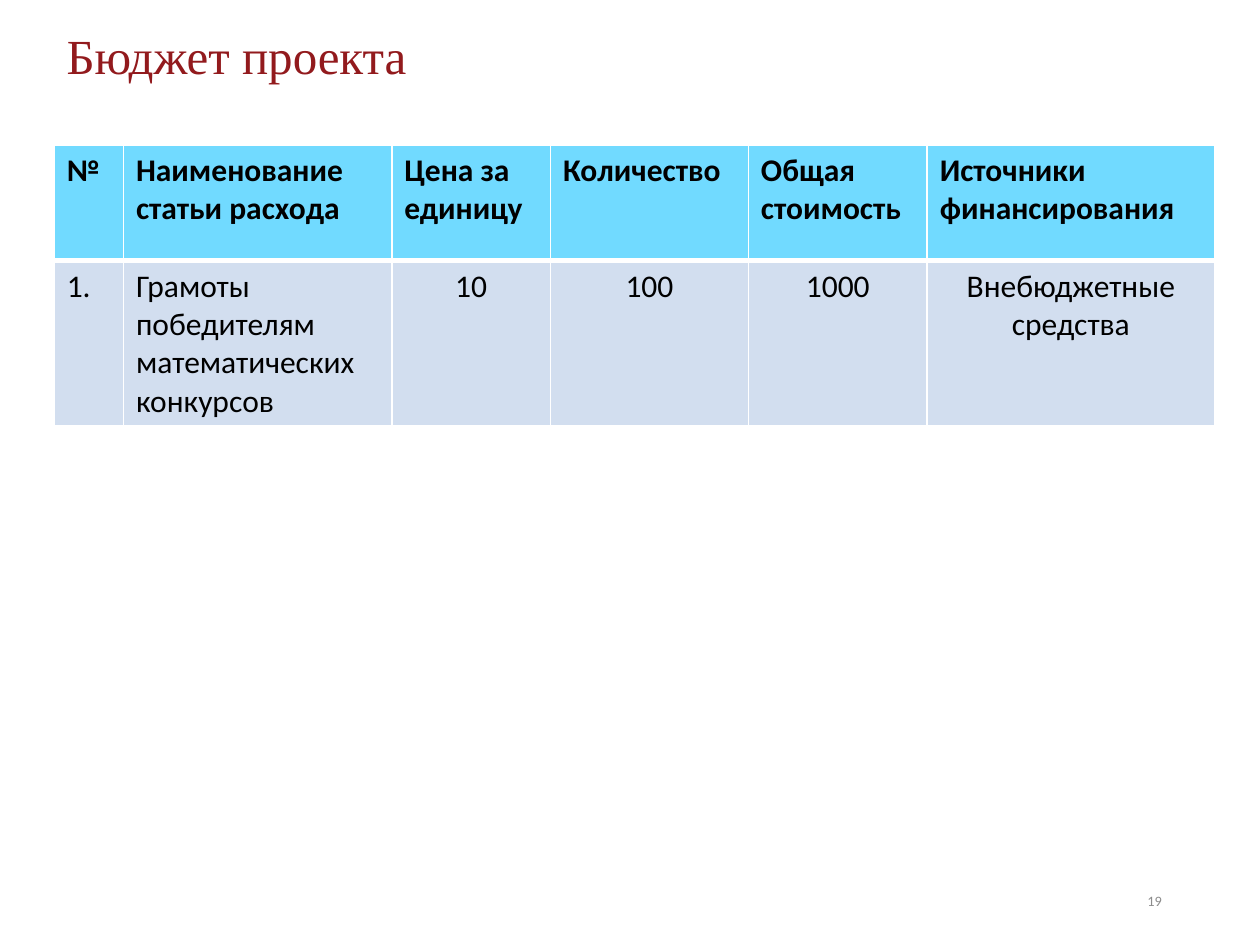
import pptx
import pptx.util
import pptx.dml.color
import pptx.enum.text
import pptx.oxml.ns
import lxml.etree

Inches, Pt = pptx.util.Inches, pptx.util.Pt
RGBColor = pptx.dml.color.RGBColor
PP_ALIGN = pptx.enum.text.PP_ALIGN
MIDDLE = pptx.enum.text.MSO_ANCHOR.MIDDLE
qn = pptx.oxml.ns.qn

BLACK = RGBColor(0x00, 0x00, 0x00)
WHITE = RGBColor(0xFF, 0xFF, 0xFF)
DARK_RED = RGBColor(0x92, 0x1A, 0x1D)
GREY = RGBColor(0x8C, 0x8C, 0x8C)
HEADER_BLUE = RGBColor(0x71, 0xDA, 0xFF)
ROW_BLUE = RGBColor(0xD2, 0xDE, 0xEF)


def write(frame, text, font_name, size, color, bold=False, align=PP_ALIGN.LEFT):
    frame.text = text
    frame.word_wrap = True
    paragraph = frame.paragraphs[0]
    paragraph.alignment = align
    font = paragraph.runs[0].font
    font.name, font.size, font.bold = font_name, Pt(size), bold
    font.color.rgb = color
    return paragraph


def add_borders(cell, widths):
    properties = cell._tc.get_or_add_tcPr()
    for position, (side, width) in enumerate(widths.items()):
        line = lxml.etree.Element(qn(f"a:{side}"), w=str(Pt(width)))
        fill = lxml.etree.SubElement(line, qn("a:solidFill"))
        lxml.etree.SubElement(fill, qn("a:srgbClr"), val=str(WHITE))
        properties.insert(position, line)


presentation = pptx.Presentation()
presentation.slide_width, presentation.slide_height = Inches(10), Inches(7.5)
slide = presentation.slides.add_slide(presentation.slide_layouts[6])

# Budget table
column_widths = [0.55, 2.13, 1.26, 1.57, 1.42, 2.28]
row_heights = [0.92, 1.3]
budget_rows = [
    ["№", "Наименование статьи расхода", "Цена за единицу", "Количество",
     "Общая стоимость", "Источники финансирования"],
    ["1.", "Грамоты победителям математических конкурсов", "10", "100",
     "1000", "Внебюджетные средства"],
]
budget = slide.shapes.add_table(
    len(budget_rows), len(column_widths), Inches(0.43), Inches(1.15),
    Inches(sum(column_widths)), Inches(sum(row_heights))).table
for column, width in zip(budget.columns, column_widths):
    column.width = Inches(width)
for row, height in zip(budget.rows, row_heights):
    row.height = Inches(height)

for r, entries in enumerate(budget_rows):
    is_header = r == 0
    for c, entry in enumerate(entries):
        cell = budget.cell(r, c)
        cell.fill.solid()
        cell.fill.fore_color.rgb = HEADER_BLUE if is_header else ROW_BLUE
        centred = not is_header and c >= 2
        write(cell.text_frame, entry, "Calibri", 18, BLACK, is_header,
              PP_ALIGN.CENTER if centred else PP_ALIGN.LEFT)
        add_borders(cell, {"lnL": 1, "lnR": 1, "lnT": 1 if is_header else 3, "lnB": 3})

# Slide number
number = slide.shapes.add_textbox(Inches(7.07), Inches(6.95), Inches(2.25), Inches(0.4)).text_frame
number.vertical_anchor = MIDDLE
write(number, "19", "Calibri", 8.2, GREY, align=PP_ALIGN.RIGHT)

# Title
title = slide.shapes.add_textbox(Inches(0.43), Inches(-0.03), Inches(4.26), Inches(0.99)).text_frame
title.vertical_anchor = MIDDLE
write(title, "Бюджет проекта", "Times New Roman", 28, DARK_RED).line_spacing = 0.9

presentation.save("out.pptx")
